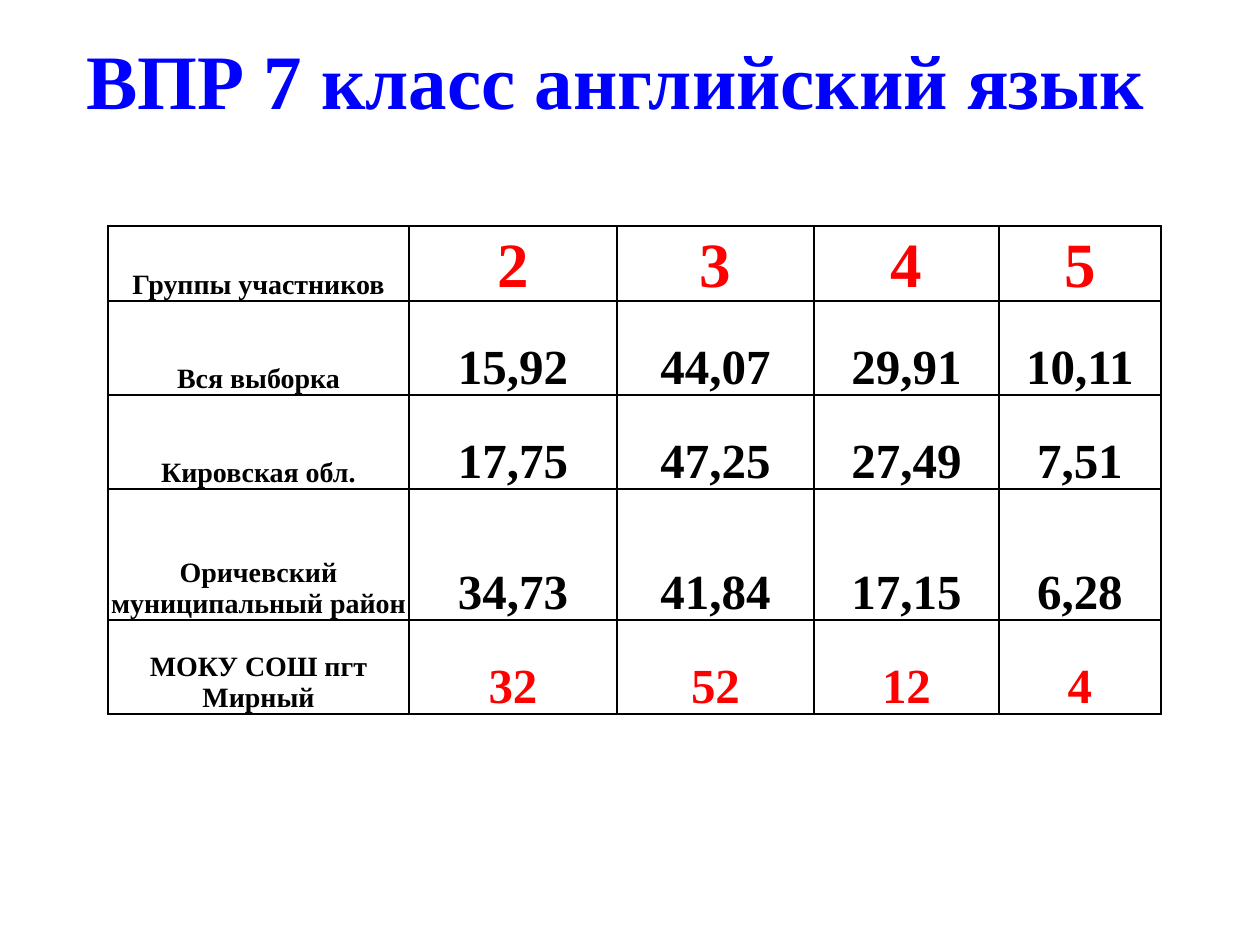
from pptx import Presentation
from pptx.dml.color import RGBColor
from pptx.enum.text import MSO_ANCHOR, PP_ALIGN
from pptx.oxml import parse_xml
from pptx.oxml.ns import nsdecls
from pptx.util import Pt

PX = 914400 / 126
BLUE = RGBColor(0, 0, 255)
RED = RGBColor(255, 0, 0)
BLACK = RGBColor(0, 0, 0)
FONT = "Times New Roman"


def px(size):
    return round(size * PX)


def write(frame, text, size, color):
    para = frame.paragraphs[0]
    para.alignment = PP_ALIGN.CENTER
    run = para.add_run()
    run.text = text
    run.font.name = FONT
    run.font.size = Pt(size)
    run.font.bold = True
    run.font.color.rgb = color


deck = Presentation()
deck.slide_width, deck.slide_height = px(1260), px(945)
slide = deck.slides.add_slide(deck.slide_layouts[5])

title = slide.shapes.title
title.left, title.top, title.width, title.height = px(49), 0, px(1134), px(158)
title.text_frame.vertical_anchor = MSO_ANCHOR.MIDDLE
write(title.text_frame, "ВПР 7 класс английский язык", 44, BLUE)

wide = [301, 208, 197, 185, 162]
high = [75, 94, 94, 131, 94]
rows = [
    ["Группы участников", "2", "3", "4", "5"],
    ["Вся выборка", "15,92", "44,07", "29,91", "10,11"],
    ["Кировская обл.", "17,75", "47,25", "27,49", "7,51"],
    ["Оричевский муниципальный район", "34,73", "41,84", "17,15", "6,28"],
    ["МОКУ СОШ пгт Мирный", "32", "52", "12", "4"],
]
sizes = [36, 28, 28, 28, 28]
tints = [RED, BLACK, BLACK, BLACK, RED]

table = slide.shapes.add_table(
    len(rows), len(wide), px(108), px(226), px(sum(wide)), px(sum(high))
).table
table.first_row = False
table.horz_banding = False
for col, width in zip(table.columns, wide):
    col.width = px(width)

for r, row in enumerate(rows):
    table.rows[r].height = px(high[r])
    for c, text in enumerate(row):
        cell = table.cell(r, c)
        cell.margin_left = cell.margin_right = cell.margin_top = px(1)
        cell.margin_bottom = 0
        cell.vertical_anchor = MSO_ANCHOR.BOTTOM
        if c == 0:
            write(cell.text_frame, text, 16, BLACK)
        else:
            write(cell.text_frame, text, sizes[r], tints[r])
        props = cell._tc.get_or_add_tcPr()
        for side in ("lnL", "lnR", "lnT", "lnB"):
            props.append(parse_xml(
                f'<a:{side} {nsdecls("a")} w="{Pt(1)}"><a:solidFill>'
                f'<a:srgbClr val="{BLACK}"/></a:solidFill></a:{side}>'
            ))
        cell.fill.background()

deck.save("out.pptx")
